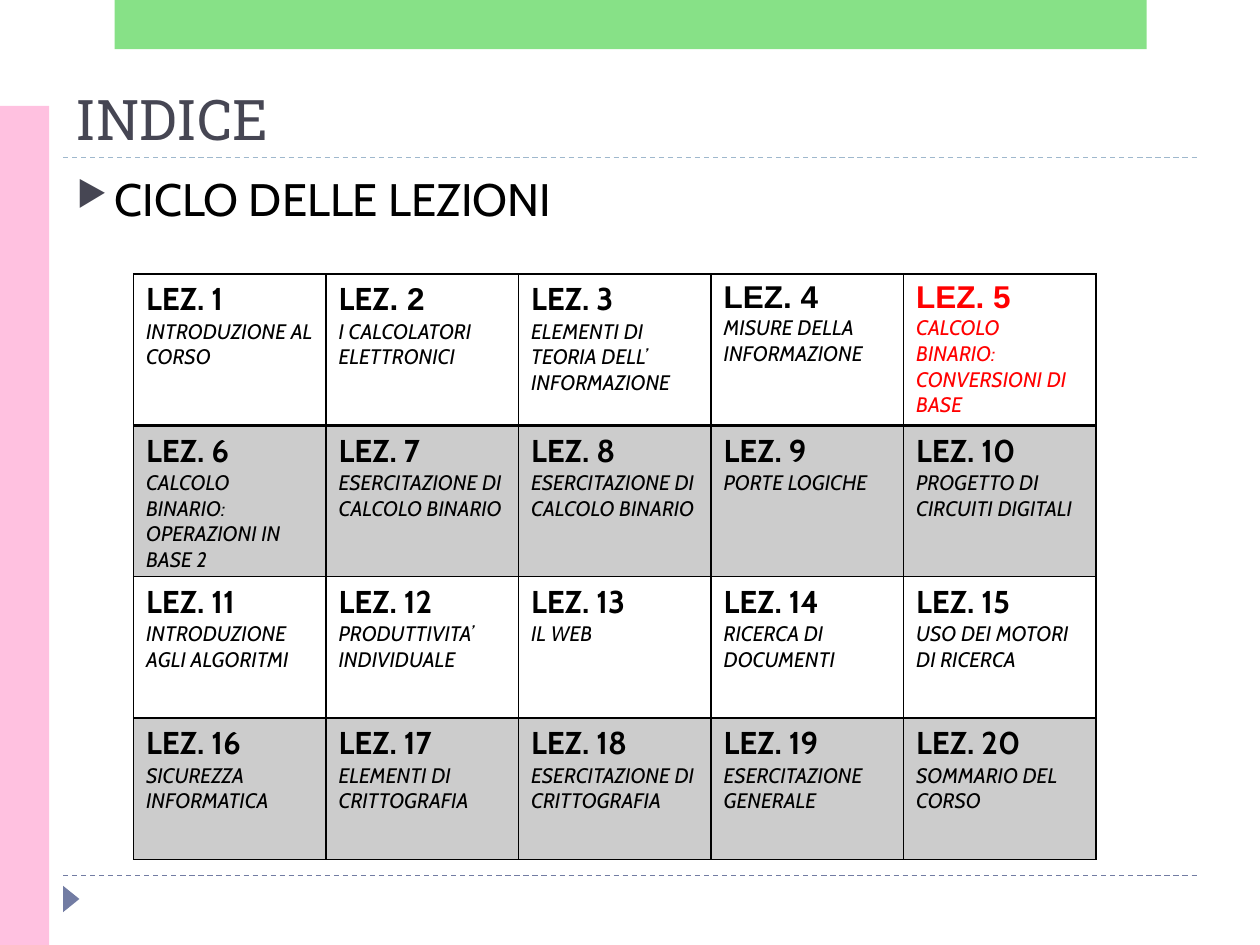
from dataclasses import dataclass

from lxml import etree
from pptx import Presentation
from pptx import util as u
from pptx.dml.color import RGBColor
from pptx.enum import dml, shapes, text
from pptx.oxml import ns


@dataclass(frozen=True)
class Theme:
    ink: str = "000000"
    slate: str = "464653"
    blue: str = "727CA3"
    pale: str = "9FB8CD"
    pink: str = "FFC1E0"
    green: str = "62D862"
    red: str = "FF0000"
    serif: str = "Roboto Slab"
    sans: str = "Cabin"
    plain: str = "Arial"
    title: int = 32
    body: int = 26
    head: int = 18
    note: int = 12


T = Theme()
UNIT = 0.5
COLS, ROWS = 20, 15
WIDE = 5
NOW = 5
PLAIN = {2: 3, 4: 0, 5: 0}
TOPICS = [
    "INTRODUZIONE AL CORSO",
    "I CALCOLATORI\vELETTRONICI",
    "ELEMENTI DI TEORIA DELL’\vINFORMAZIONE",
    "MISURE DELLA INFORMAZIONE",
    "CALCOLO BINARIO: CONVERSIONI DI BASE",
    "CALCOLO BINARIO: OPERAZIONI IN BASE 2",
    "ESERCITAZIONE DI CALCOLO BINARIO",
    "ESERCITAZIONE DI CALCOLO BINARIO",
    "PORTE LOGICHE",
    "PROGETTO DI CIRCUITI DIGITALI",
    "INTRODUZIONE AGLI ALGORITMI",
    "PRODUTTIVITA’ INDIVIDUALE",
    "IL WEB",
    "RICERCA DI DOCUMENTI",
    "USO DEI MOTORI DI RICERCA",
    "SICUREZZA INFORMATICA",
    "ELEMENTI DI CRITTOGRAFIA",
    "ESERCITAZIONE DI CRITTOGRAFIA",
    "ESERCITAZIONE GENERALE",
    "SOMMARIO DEL CORSO",
]


def grid(*spans):
    return [u.Inches(span * UNIT) for span in spans]


def sub(node, tag, **attrs):
    return etree.SubElement(node, ns.qn(tag), **attrs)


def paint(fill, color, node=None, alpha=None):
    fill.solid()
    fill.fore_color.rgb = RGBColor.from_string(color)
    if alpha:
        tone = node.find(".//" + ns.qn("a:srgbClr"))
        sub(tone, "a:alpha", val=str(alpha * 1000))


def style(font, face, size, color, bold=False, italic=False):
    font.name, font.size = face, u.Pt(size)
    font.bold, font.italic = bold, italic
    font.color.rgb = RGBColor.from_string(color)


def rule(slide, row, color):
    line = slide.shapes.add_connector(
        shapes.MSO_CONNECTOR.STRAIGHT, *grid(1, row, COLS - 1, row))
    line.line.color.rgb = RGBColor.from_string(color)
    line.line.width = u.Pt(0.75)
    line.line.dash_style = dml.MSO_LINE.DASH
    sub(line._element.spPr, "a:effectLst")


def block(slide, kind, spans, color, alpha=None, turn=0):
    shape = slide.shapes.add_shape(kind, *grid(*spans))
    shape.shadow.inherit = False
    shape.line.fill.background()
    paint(shape.fill, color, shape._element.spPr, alpha)
    shape.rotation = turn


def label(slide, spans, words, anchor):
    frame = slide.shapes.add_textbox(*grid(*spans)).text_frame
    frame.word_wrap = True
    frame.vertical_anchor = anchor
    para = frame.paragraphs[0]
    para.text = words
    return para


def bullet(para):
    props = para._p.get_or_add_pPr()
    props.set("marL", str(u.Inches(0.3)))
    props.set("indent", str(u.Inches(-0.3)))
    sub(sub(props, "a:buClr"), "a:srgbClr", val=T.slate)
    sub(props, "a:buSzPct", val="76000")
    sub(props, "a:buChar", char="▶")


def border(cell, row):
    props = cell._tc.get_or_add_tcPr()
    thick = {(0, "B"), (1, "T")}
    for side in "LRTB":
        width = 2 if (row, side) in thick else 1
        line = sub(props, "a:ln" + side, w=str(u.Pt(width)))
        sub(sub(line, "a:solidFill"), "a:srgbClr", val=T.ink)


def lesson(cell, num, topic):
    color = T.red if num == NOW else T.ink
    head = cell.text_frame.paragraphs[0]
    name = f"LEZ. {num}"
    cut = PLAIN.get(num, len(name))
    parts = [(face, words) for face, words in
             ((T.sans, name[:cut]), (T.plain, name[cut:])) if words]
    style(head.font, parts[0][0], T.head, color, bold=True)
    for face, words in parts:
        run = head.add_run()
        run.text = words
        style(run.font, face, T.head, color, bold=True)
    note = cell.text_frame.add_paragraph()
    note.text = topic
    style(note.font, T.sans, T.note, color, italic=True)


def plan(slide, spans):
    table = slide.shapes.add_table(
        len(TOPICS) // WIDE, WIDE, *grid(*spans)).table
    table.first_row = table.horz_banding = False
    for spot, topic in enumerate(TOPICS):
        row, col = divmod(spot, WIDE)
        cell = table.cell(row, col)
        border(cell, row)
        if row % 2:
            paint(cell.fill, T.ink, cell._tc.tcPr.find(ns.qn("a:solidFill")) or cell._tc.tcPr)
            tone = cell._tc.tcPr.find(ns.qn("a:solidFill"))[0]
            sub(tone, "a:alpha", val="20000")
        else:
            cell.fill.background()
        lesson(cell, spot + 1, topic)


def main():
    deck = Presentation()
    deck.slide_width, deck.slide_height = grid(COLS, ROWS)
    slide = deck.slides.add_slide(deck.slide_layouts[6])
    kind = shapes.MSO_SHAPE
    rule(slide, 13.9, T.blue)
    rule(slide, 2.5, T.pale)
    block(slide, kind.ISOSCELES_TRIANGLE, (0.92, 14.14, 0.42, 0.26), T.blue, turn=90)
    block(slide, kind.RECTANGLE, (0, 1.68, 0.78, 13.32), T.pink)
    block(slide, kind.RECTANGLE, (1.82, 0, 16.38, 0.78), T.green, alpha=76)
    title = label(slide, (1, 1.1, 18, 1.4), "INDICE", text.MSO_ANCHOR.BOTTOM)
    style(title.font, T.serif, T.title, T.slate)
    body = label(slide, (1.02, 2.62, 18, 1.58), "CICLO DELLE LEZIONI", text.MSO_ANCHOR.TOP)
    bullet(body)
    style(body.font, T.sans, T.body, T.ink)
    plan(slide, (2.12, 4.35, 15.28, 8.98))
    deck.save("out.pptx")


if __name__ == "__main__":
    main()
